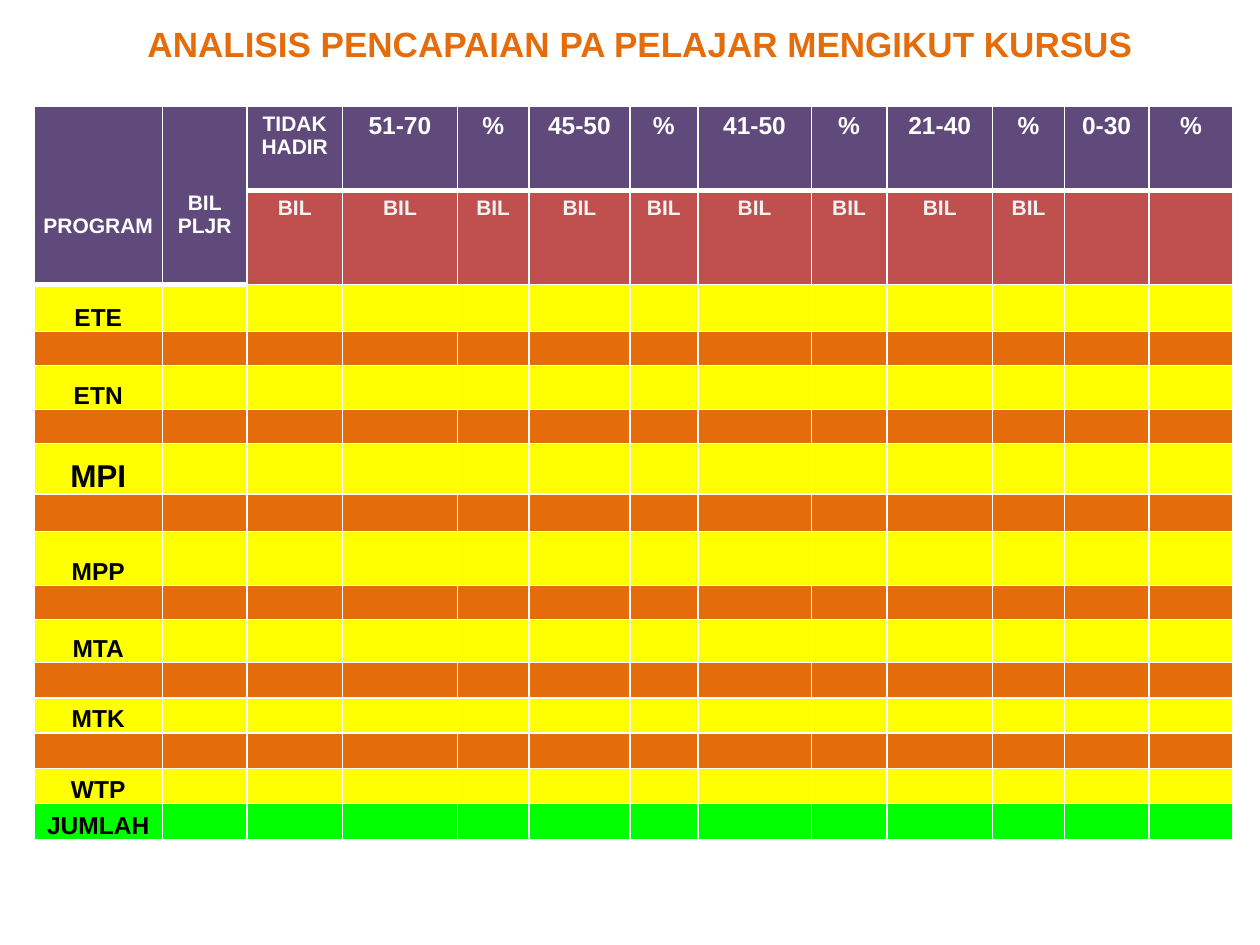
from lxml.etree import SubElement
from pptx import Presentation
from pptx.dml.color import RGBColor
from pptx.enum.text import MSO_ANCHOR, PP_ALIGN
from pptx.oxml.ns import qn
from pptx.util import Inches, Pt

COLORS = {"purple": "604A7B", "red": "C0504D", "yellow": "FFFF00",
          "orange": "E46C0A", "green": "00FF00", "white": "FFFFFF",
          "pale": "F2F2F2", "black": "000000"}
FONT = "Arial"
TITLE = "ANALISIS PENCAPAIAN PA PELAJAR MENGIKUT KURSUS"
HEADINGS = ["PROGRAM", "BIL\nPLJR", "TIDAK\nHADIR", "51-70", "%", "45-50", "%",
            "41-50", "%", "21-40", "%", "0-30", "%"]
SUBHEADINGS = [""] * 2 + ["BIL"] * 9 + [""] * 2
# Programme, height of its row, height of the orange row below it
PROGRAMS = [("ETE", 0.37, 0.27), ("ETN", 0.35, 0.27), ("MPI", 0.4, 0.3),
            ("MPP", 0.43, 0.27), ("MTA", 0.34, 0.28), ("MTK", 0.28, 0.28),
            ("WTP", 0.28, None)]
TOTAL = ("JUMLAH", 0.29)
COLUMN_WIDTHS = [1.02, 0.67, 0.76, 0.91, 0.57, 0.8, 0.54, 0.9, 0.6, 0.84,
                 0.57, 0.67, 0.67]
HEADER_HEIGHTS = [0.67, 0.75]
MERGED_COLUMNS = 2
THIN, THICK = 1, 3


def write(frame, text, size, color):
    frame.text = text
    for paragraph in frame.paragraphs:
        paragraph.alignment = PP_ALIGN.CENTER
        for run in paragraph.runs:
            for name, value in {"name": FONT, "size": Pt(size), "bold": True}.items():
                setattr(run.font, name, value)
            run.font.color.rgb = RGBColor.from_string(COLORS[color])
        if not text:  # keeps an empty cell from stretching its row
            SubElement(paragraph._p, qn("a:endParaRPr"), sz=str(size * 100))


def add_borders(cell, top, bottom):
    properties = cell._tc.get_or_add_tcPr()
    for side, width in {"L": THIN, "R": THIN, "T": top, "B": bottom}.items():
        line = SubElement(properties, qn(f"a:ln{side}"), w=str(Pt(width)))
        fill = SubElement(line, qn("a:solidFill"))
        SubElement(fill, qn("a:srgbClr"), val=COLORS["white"])


def body_rows():
    """List (label, height, fill) for every row under the header."""
    rows = []
    for program, height, gap in PROGRAMS:
        rows.append((program, height, "yellow"))
        if gap:
            rows.append(("", gap, "orange"))
    return rows + [(*TOTAL, "green")]


def style_cell(cell, row, column, text, fill):
    merged = column < MERGED_COLUMNS
    header_end = 1 if merged else 0
    add_borders(cell, THICK if row == header_end + 1 else THIN,
                THICK if row == header_end or (merged and row == 0) else THIN)
    cell.fill.solid()
    cell.fill.fore_color.rgb = RGBColor.from_string(COLORS[fill])
    header = row < len(HEADER_HEIGHTS)
    layout = {
        "margin_left": 0, "margin_right": 0,
        "margin_top": Inches(0.05 if header and not merged else 0),
        "margin_bottom": Inches(0.37 if row == 0 and merged else 0),
        "vertical_anchor": MSO_ANCHOR.TOP if header and not merged else MSO_ANCHOR.BOTTOM,
    }
    for name, value in layout.items():
        setattr(cell, name, value)
    small = row == 1 or (row == 0 and column <= MERGED_COLUMNS)
    size = 18 if text == "MPI" else 12 if small or not text else 14
    color = "white" if row == 0 else "pale" if row == 1 else "black"
    write(cell.text_frame, text, size, color)


def add_table(slide):
    body = body_rows()
    heights = HEADER_HEIGHTS + [height for _, height, _ in body]
    blanks = [""] * (len(COLUMN_WIDTHS) - 1)
    content = [(HEADINGS, "purple"), (SUBHEADINGS, "red")]
    content += [([label, *blanks], fill) for label, _, fill in body]
    table = slide.shapes.add_table(
        len(heights), len(COLUMN_WIDTHS), Inches(0.27), Inches(0.84),
        Inches(sum(COLUMN_WIDTHS)), Inches(sum(heights))).table
    table.first_row = table.horz_banding = False
    for column, width in zip(table.columns, COLUMN_WIDTHS):
        column.width = Inches(width)
    for row, height in zip(table.rows, heights):
        row.height = Inches(height)
    for row, (texts, fill) in enumerate(content):
        for column, text in enumerate(texts):
            spanned = row == 1 and column < MERGED_COLUMNS
            style_cell(table.cell(row, column), row, column, text,
                       "purple" if spanned else fill)
    for column in range(MERGED_COLUMNS):
        table.cell(0, column).merge(table.cell(1, column))


def main():
    deck = Presentation()
    deck.slide_width, deck.slide_height = Inches(10), Inches(7.5)
    slide = deck.slides.add_slide(deck.slide_layouts[6])
    add_table(slide)
    title = slide.shapes.add_textbox(Inches(0.67), Inches(0.13), Inches(8.82), Inches(0.44))
    title.text_frame.word_wrap = True
    write(title.text_frame, TITLE, 20, "orange")
    deck.save("out.pptx")


if __name__ == "__main__":
    main()
